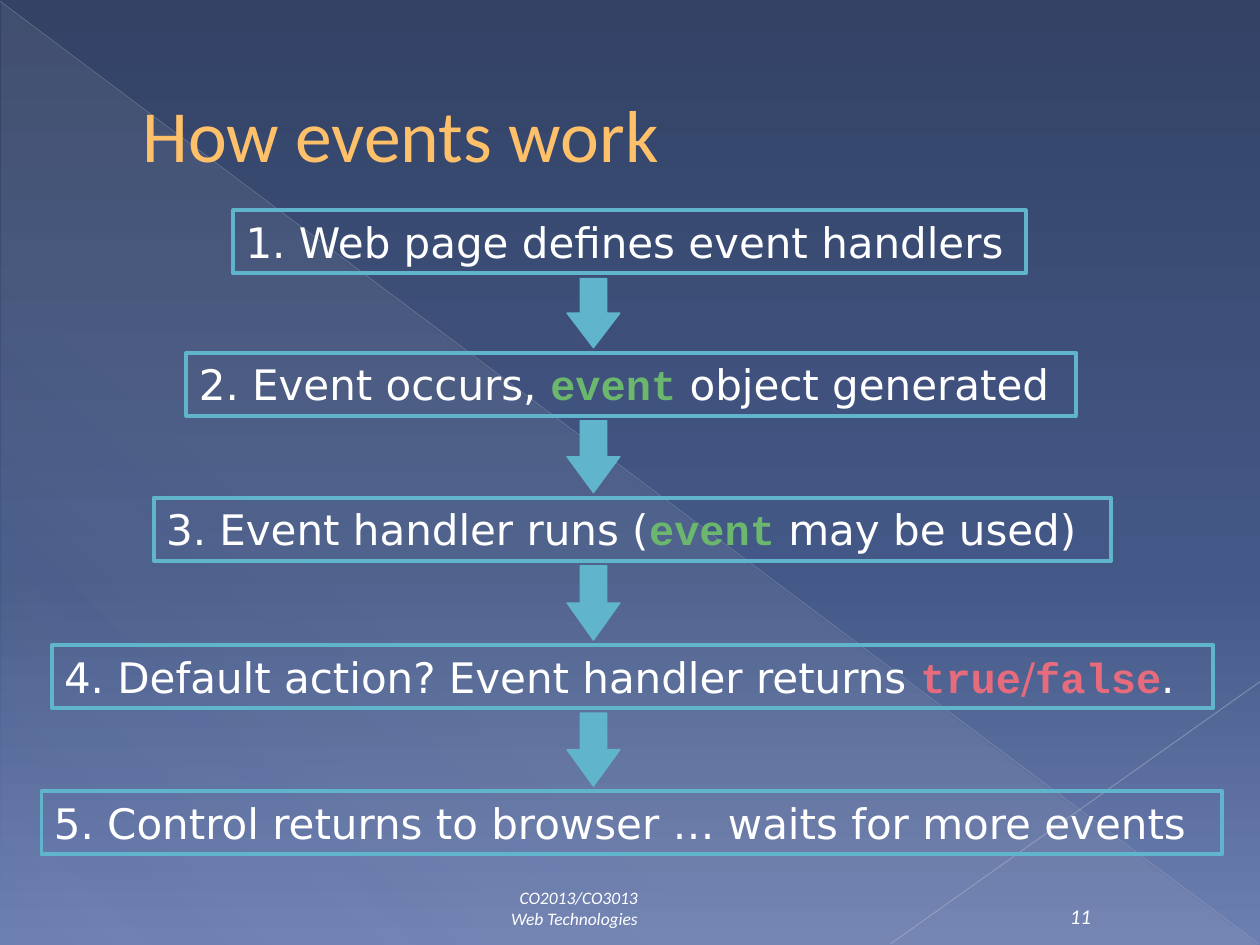
import pptx
import pptx.util
import pptx.dml.color
import pptx.enum.shapes
import pptx.enum.text
import pptx.oxml
import pptx.oxml.ns

Inches, Pt = pptx.util.Inches, pptx.util.Pt
ALIGN = pptx.enum.text.PP_ALIGN
ANCHOR = pptx.enum.text.MSO_ANCHOR
SHAPE = pptx.enum.shapes.MSO_SHAPE

COLORS = {"title": "FFC06A", "text": "FFFFFF", "accent": "60B5CC",
          "object": "6BB76D", "value": "E66C7D"}
BODY, CODE, HEADING = "DejaVu Sans", "Courier New", "Calibri"
WIDTH, HEIGHT = 10, 7.5

# Content: each step is (left, top, width, runs); a run is (text, font, color)
TITLE = "How events work"
STEPS = [
    (1.85, 1.67, 6.29, [("1. Web page defines event handlers", BODY, "text")]),
    (1.48, 2.8, 7.06, [("2. Event occurs, ", BODY, "text"),
                       ("event", CODE, "object"),
                       (" object generated", BODY, "text")]),
    (1.22, 3.95, 7.6, [("3. Event handler runs (", BODY, "text"),
                       ("event", CODE, "object"),
                       (" may be used)", BODY, "text")]),
    (0.41, 5.12, 9.22, [("4. Default action? Event handler returns ", BODY, "text"),
                        ("true", CODE, "value"), ("/", BODY, "value"),
                        ("false", CODE, "value"), (".", BODY, "text")]),
    (0.33, 6.28, 9.37, [("5. Control returns to browser … waits for more events",
                         BODY, "text")]),
]
# Footers: text, left, width, size, alignment
FOOTERS = [("CO2013/CO3013\vWeb Technologies", 0.5, 4.66, 10, ALIGN.RIGHT),
           ("11", 8.3, 0.55, 12, ALIGN.CENTER)]
STEP_HEIGHT, ARROW_LEFT, ARROW_WIDTH, ARROW_GAP = 0.5, 4.5, 0.42, 0.04

# Decoration: stops are (percent, color, opacity percent)
SKY = [(0, "334265", 100), (60, "445887", 100), (100, "6C7FB1", 100)]
HAZE = [(0, "D4D4D6", 10), (70, "D4D4D6", 8), (100, "D4D4D6", 1)]
# Lines: start, end, color, width, opacity percent
RAYS = [((0, 0.01), (9.99, 7.49), "B9BDC8", 0.39, 35),
        ((10, 5.41), (7.07, 7.49), "C1C4CE", 0.47, 45)]


def rgb(value):
    return pptx.dml.color.RGBColor.from_string(value)


def add_child(parent, tag, **attributes):
    child = pptx.oxml.parse_xml(f"<{tag} {pptx.oxml.ns.nsdecls('a')}/>")
    for name, value in attributes.items():
        child.set(name, str(value))
    parent.append(child)
    return child


def set_gradient(fill, owner, stops, angle):
    fill.gradient()
    gradient = owner.find(".//" + pptx.oxml.ns.qn("a:gradFill"))
    for child in list(gradient):
        gradient.remove(child)
    stop_list = add_child(gradient, "a:gsLst")
    for position, color, opacity in stops:
        stop = add_child(stop_list, "a:gs", pos=position * 1000)
        color_element = add_child(stop, "a:srgbClr", val=color)
        add_child(color_element, "a:alpha", val=opacity * 1000)
    add_child(gradient, "a:lin", ang=angle * 60000, scaled=0)


def add_run(paragraph, text, font, size, color, bold=False, italic=False):
    run = paragraph.add_run()
    run.text = text
    run.font.name, run.font.size = font, Pt(size)
    run.font.bold, run.font.italic = bold, italic
    run.font.color.rgb = rgb(color)


def add_shape(slide, kind, left, top, width, height):
    shape = slide.shapes.add_shape(
        kind, Inches(left), Inches(top), Inches(width), Inches(height))
    shape.shadow.inherit = False
    return shape


def add_backdrop(slide):
    set_gradient(slide.background.fill, slide.element, SKY, 90)
    haze = add_shape(slide, SHAPE.RIGHT_TRIANGLE, 0.01, 0.02, 9.98, 7.48)
    set_gradient(haze.fill, haze.element, HAZE, 133)
    haze.line.fill.background()
    for start, end, color, width, opacity in RAYS:
        ray = slide.shapes.add_connector(
            pptx.enum.shapes.MSO_CONNECTOR.STRAIGHT,
            *[Inches(value) for value in start + end])
        ray.line.width = Pt(width)
        ray.line.color.rgb = rgb(color)
        color_element = ray.element.spPr.find(".//" + pptx.oxml.ns.qn("a:srgbClr"))
        add_child(color_element, "a:alpha", val=opacity * 1000)
        add_child(ray.element.spPr, "a:effectLst")


def add_title(slide):
    title = slide.shapes.title
    title.left, title.top = Inches(0.5), Inches(0.29)
    title.width, title.height = Inches(9), Inches(1.53)
    title.text_frame.vertical_anchor = ANCHOR.MIDDLE
    paragraph = title.text_frame.paragraphs[0]
    paragraph.alignment = ALIGN.LEFT
    properties = paragraph._p.get_or_add_pPr()
    properties.set("marL", str(Inches(0.53)))
    properties.set("indent", "0")
    add_run(paragraph, TITLE, HEADING, 42, COLORS["title"])
    # Bring the title in front of the backdrop
    slide.shapes._spTree.append(title.element)


def add_step(slide, left, top, width, runs):
    box = add_shape(slide, SHAPE.RECTANGLE, left, top, width, STEP_HEIGHT)
    box.fill.background()
    box.line.color.rgb = rgb(COLORS["accent"])
    box.line.width = Pt(2.25)
    frame = box.text_frame
    frame.word_wrap = True
    frame.vertical_anchor = ANCHOR.TOP
    frame.paragraphs[0].alignment = ALIGN.LEFT
    for text, font, color in runs:
        add_run(frame.paragraphs[0], text, font, 24, COLORS[color], bold=font == CODE)


def add_arrow(slide, top, bottom):
    height = bottom - top
    arrow = add_shape(slide, SHAPE.DOWN_ARROW, ARROW_LEFT, top, ARROW_WIDTH, height)
    arrow.adjustments[0] = 0.5
    arrow.adjustments[1] = height / 2 / ARROW_WIDTH
    arrow.fill.solid()
    arrow.fill.fore_color.rgb = rgb(COLORS["accent"])
    arrow.line.color.rgb = rgb(COLORS["accent"])
    arrow.line.width = Pt(0.75)


def add_footer(slide, text, left, width, size, alignment):
    box = slide.shapes.add_textbox(
        Inches(left), Inches(7.09), Inches(width), Inches(0.33))
    box.text_frame.word_wrap = True
    box.text_frame.vertical_anchor = ANCHOR.BOTTOM
    paragraph = box.text_frame.paragraphs[0]
    paragraph.alignment = alignment
    for index, line in enumerate(text.split("\v")):
        if index:
            paragraph.add_line_break()
        add_run(paragraph, line, HEADING, size, COLORS["text"], italic=True)


def main():
    presentation = pptx.Presentation()
    presentation.slide_width, presentation.slide_height = Inches(WIDTH), Inches(HEIGHT)
    slide = presentation.slides.add_slide(presentation.slide_layouts[5])
    add_backdrop(slide)
    add_title(slide)
    for footer in FOOTERS:
        add_footer(slide, *footer)
    for step in STEPS:
        add_step(slide, *step)
    # Each arrow fills the gap between two neighbouring steps
    for upper, lower in zip(STEPS, STEPS[1:]):
        add_arrow(slide, upper[1] + STEP_HEIGHT + ARROW_GAP, lower[1] - ARROW_GAP)
    presentation.save("out.pptx")


if __name__ == "__main__":
    main()
